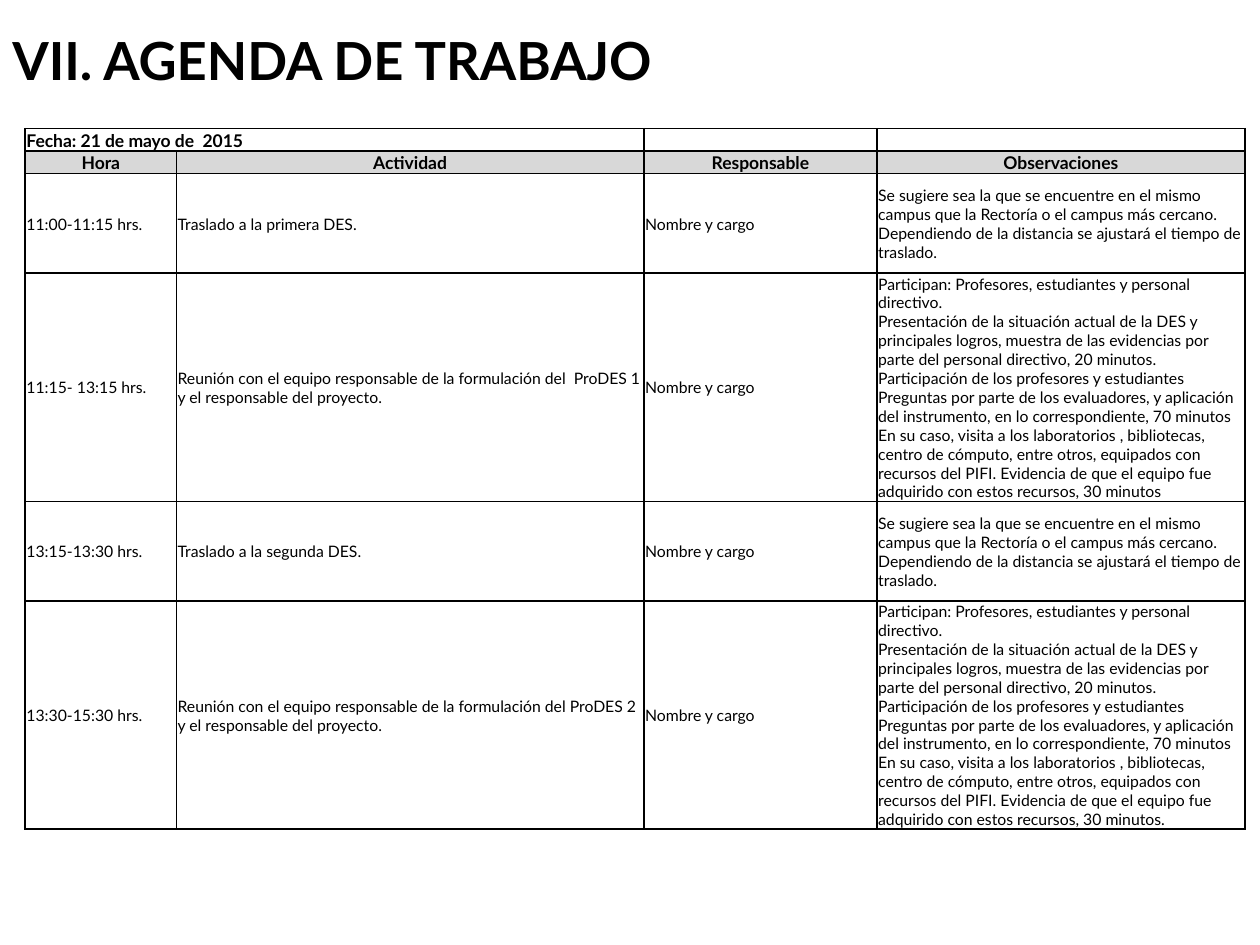
from lxml import etree
from pptx import Presentation
from pptx import util as u
from pptx.dml import color
from pptx.enum import text
from pptx.oxml import ns

COLORS = {"ink": "000000", "header": "D8D8D8"}
FONT = "Lato"
COLUMN_WIDTHS = [1.2, 3.71, 1.85, 2.92]
ROW_HEIGHTS = [0.17, 0.18, 0.79, 1.81, 0.79, 1.81]

DATE = "Fecha: 21 de mayo de  2015"
HEADINGS = ["Hora", "Actividad", "Responsable", "Observaciones"]
PERSON = "Nombre y cargo"
TRANSFER_NOTES = [
    "Se sugiere sea la que se encuentre en el mismo campus que la Rectoría o el campus más "
    "cercano. Dependiendo de la distancia se ajustará el tiempo de traslado."
]
MEETING_NOTES = [
    "Participan: Profesores, estudiantes y personal directivo.\n"
    "Presentación de la situación actual de la DES y principales logros, muestra de las "
    "evidencias por parte del personal directivo, 20 minutos.",
    "Participación de los profesores y estudiantes Preguntas por parte de los evaluadores, y "
    "aplicación del instrumento, en lo correspondiente, 70 minutos",
    "En su caso, visita a los laboratorios , bibliotecas, centro de cómputo, entre otros, "
    "equipados con recursos del PIFI. Evidencia de que el equipo fue adquirido con estos "
    "recursos, 30 minutos",
]
LAST_MEETING_NOTES = MEETING_NOTES[:-1] + [MEETING_NOTES[-1] + "."]
MEETING = "Reunión con el equipo responsable de la formulación del {} y el responsable del proyecto."
SESSIONS = [
    ("11:00-11:15 hrs.", "Traslado a la primera DES.", TRANSFER_NOTES),
    ("11:15- 13:15 hrs.", MEETING.format(" ProDES 1"), MEETING_NOTES),
    ("13:15-13:30 hrs.", "Traslado a la segunda DES.", TRANSFER_NOTES),
    ("13:30-15:30 hrs.", MEETING.format("ProDES 2"), LAST_MEETING_NOTES),
]


def set_values(target, values):
    for name, value in values.items():
        setattr(target, name, value)


def write_paragraph(para, wording, size, bold, align=text.PP_ALIGN.LEFT):
    para.text = wording
    para.alignment = align
    for span in para.runs:
        set_values(span.font, {"name": FONT, "size": u.Pt(size), "bold": bold})
        span.font.color.rgb = color.RGBColor.from_string(COLORS["ink"])
    # Line breaks and empty paragraphs need the text size too
    for line_break in para._p.findall(ns.qn("a:br")):
        etree.SubElement(line_break, ns.qn("a:rPr"), sz=str(size * 100))
    if not wording:
        etree.SubElement(para._p, ns.qn("a:endParaRPr"), sz=str(size * 100))


def add_borders(cell, width=1):
    properties = cell._tc.get_or_add_tcPr()
    for side in ("lnL", "lnR", "lnT", "lnB"):
        line = etree.SubElement(properties, ns.qn(f"a:{side}"), w=str(u.Pt(width)))
        fill = etree.SubElement(line, ns.qn("a:solidFill"))
        etree.SubElement(fill, ns.qn("a:srgbClr"), val=COLORS["ink"])


def fill_cell(cell, paragraphs, row_number):
    is_label, is_header = row_number < 2, row_number == 1
    add_borders(cell)
    if is_header:
        cell.fill.solid()
        cell.fill.fore_color.rgb = color.RGBColor.from_string(COLORS["header"])
    else:
        cell.fill.background()
    inset = u.Inches(0.01)
    set_values(cell, {
        "margin_left": inset, "margin_top": inset, "margin_right": inset, "margin_bottom": 0,
        "vertical_anchor": text.MSO_ANCHOR.BOTTOM if is_label else text.MSO_ANCHOR.MIDDLE,
    })
    align = text.PP_ALIGN.CENTER if is_header else text.PP_ALIGN.LEFT
    frame = cell.text_frame
    for number, wording in enumerate(paragraphs):
        para = frame.add_paragraph() if number else frame.paragraphs[0]
        write_paragraph(para, wording, 10 if is_label else 9, is_label, align)


def add_title(page, left, top, width, height):
    box = page.shapes.add_textbox(*map(u.Inches, (left, top, width, height)))
    set_values(box.text_frame, {"word_wrap": True, "vertical_anchor": text.MSO_ANCHOR.MIDDLE})
    write_paragraph(box.text_frame.paragraphs[0], "VII. AGENDA DE TRABAJO", 30, True)


def add_agenda(page, left, top):
    size = (sum(COLUMN_WIDTHS), sum(ROW_HEIGHTS))
    table = page.shapes.add_table(
        len(ROW_HEIGHTS), len(COLUMN_WIDTHS), *map(u.Inches, (left, top, *size))
    ).table
    set_values(table, {"first_row": False, "horz_banding": False})
    for column, width in zip(table.columns, COLUMN_WIDTHS):
        column.width = u.Inches(width)
    for row, height in zip(table.rows, ROW_HEIGHTS):
        row.height = u.Inches(height)

    rows = [[[DATE], [""], [""], [""]], [[heading] for heading in HEADINGS]]
    rows += [[[hour], [activity], [PERSON], notes] for hour, activity, notes in SESSIONS]
    for row_number, row in enumerate(rows):
        for column_number, paragraphs in enumerate(row):
            fill_cell(table.cell(row_number, column_number), paragraphs, row_number)
    table.cell(0, 0).merge(table.cell(0, 1))


def main():
    deck = Presentation()
    set_values(deck, {"slide_width": u.Inches(10), "slide_height": u.Inches(7.5)})
    page = deck.slides.add_slide(deck.slide_layouts[6])
    add_agenda(page, 0.2, 1.02)
    add_title(page, 0, 0.09, 10, 0.77)
    deck.save("out.pptx")


if __name__ == "__main__":
    main()
